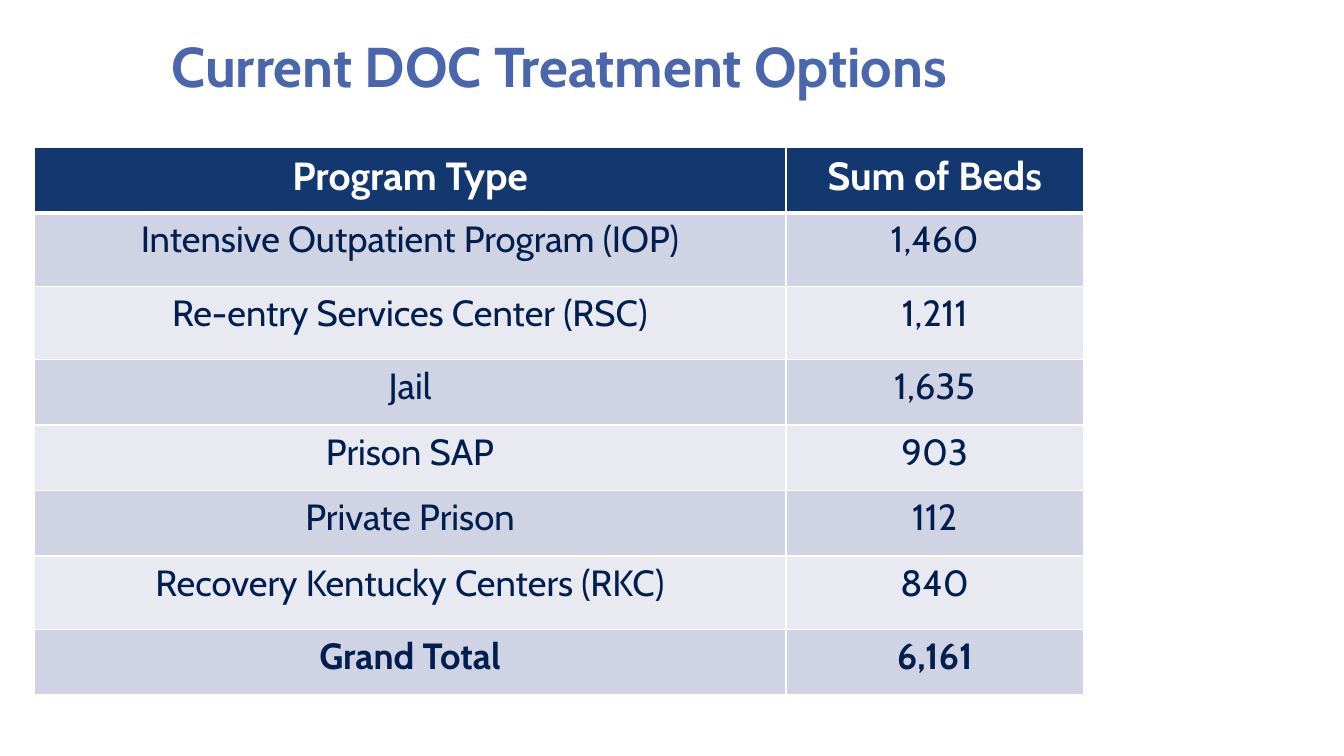
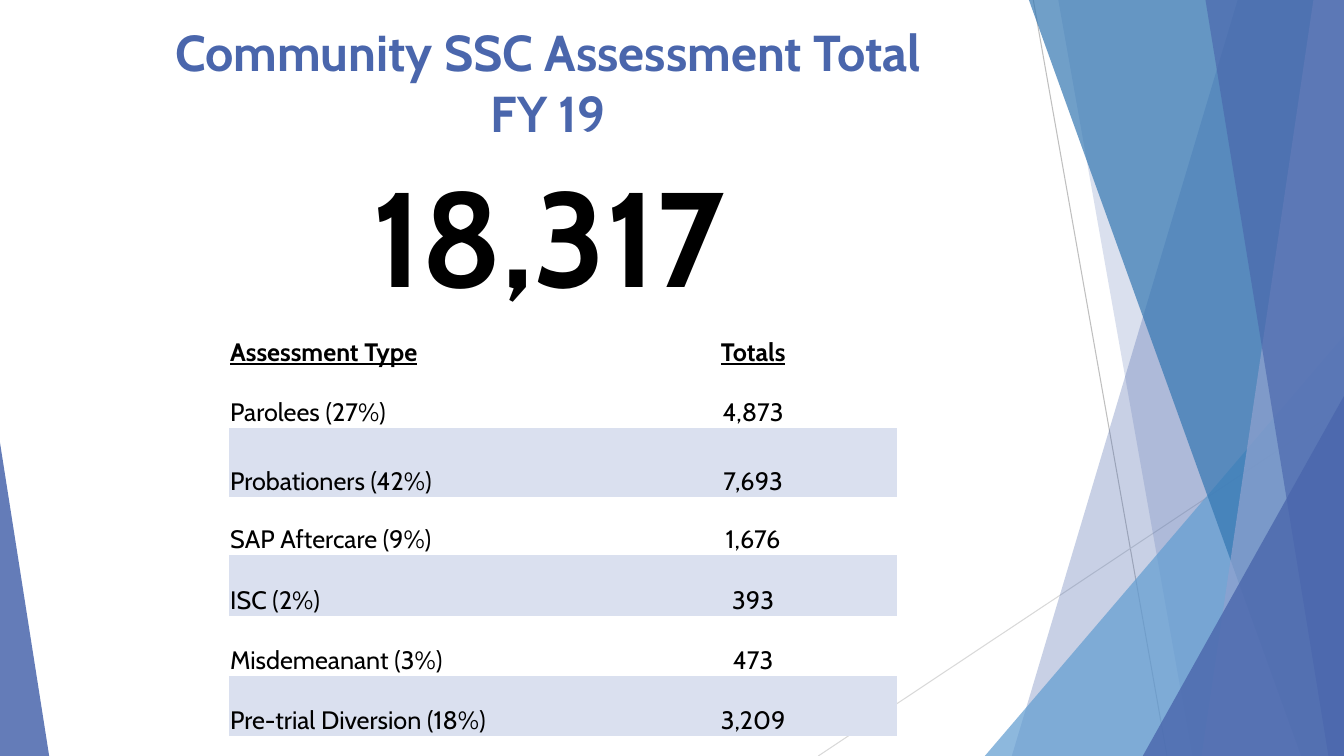
from dataclasses import dataclass
from itertools import product
from typing import Optional

from lxml.etree import SubElement as add_sub
from pptx import Presentation
from pptx.dml.color import RGBColor
from pptx.enum.shapes import MSO_CONNECTOR as Link, MSO_SHAPE as Form
from pptx.enum.text import MSO_ANCHOR as Anchor, MSO_AUTO_SIZE as Fit, PP_ALIGN as Align
from pptx.oxml import parse_xml
from pptx.oxml.ns import nsdecls, qn
from pptx.shapes.base import BaseShape
from pptx.slide import Slide
from pptx.util import Cm, Pt

FONT = "Cabin"
WIDTH, HEIGHT = 33.87, 19.05
PLAIN_GRID = "{2D5ABB26-0587-4C30-8999-92F81FD0307C}"

WHITE = RGBColor(0xFF, 0xFF, 0xFF)
BLACK = RGBColor(0x00, 0x00, 0x00)
BLUE = RGBColor(0x4A, 0x66, 0xAC)
SKY = RGBColor(0x62, 0x9D, 0xD1)
OCEAN = RGBColor(0x34, 0x77, 0xB2)
MIST = RGBColor(0x90, 0xA2, 0xCF)
NAVY = RGBColor(0x13, 0x38, 0x6F)
INK = RGBColor(0x00, 0x1F, 0x4F)
DARK_BAND = RGBColor(0xD0, 0xD3, 0xE3)
LIGHT_BAND = RGBColor(0xE9, 0xEA, 0xF1)
PALE_BAND = RGBColor(0xDA, 0xE0, 0xEF)
GREY = RGBColor(0xBF, 0xBF, 0xBF)
SILVER = RGBColor(0xD9, 0xD9, 0xD9)


@dataclass(frozen=True)
class Box:
    left: float
    top: float
    width: float
    height: float

    def lengths(self) -> tuple[Cm, Cm, Cm, Cm]:
        return Cm(self.left), Cm(self.top), Cm(self.width), Cm(self.height)


@dataclass(frozen=True)
class Style:
    size: float
    color: RGBColor
    bold: bool = False
    under: bool = False


@dataclass(frozen=True)
class Shard:
    top: float
    bottom: float
    color: RGBColor
    alpha: int


@dataclass(frozen=True)
class Peak:
    box: Box
    tip: float
    color: RGBColor
    alpha: int


@dataclass(frozen=True)
class Ray:
    start: tuple[float, float]
    end: tuple[float, float]
    color: RGBColor


@dataclass(frozen=True)
class Grid:
    left: float
    top: float
    widths: tuple[float, ...]
    heights: tuple[float, ...]
    rows: tuple[tuple[str, str], ...]
    head: Style
    body: Style
    last: Style
    fills: tuple[Optional[RGBColor], ...]
    sides: tuple[Align, Align]
    anchor: Anchor = Anchor.TOP
    inset: Optional[float] = None
    ruled: bool = False


RAYS = (
    Ray((26.04, 0), (29.41, HEIGHT), GREY),
    Ray((WIDTH, 10.24), (20.62, HEIGHT), SILVER),
)
FACETS = (
    Shard(31.19, 25.5, BLUE, 30),
    Shard(26.67, 30.05, BLUE, 20),
    Peak(Box(24.82, 8.46, 9.05, 10.59), 1, SKY, 72),
    Shard(25.93, 32.79, OCEAN, 70),
    Shard(33.1, 30.28, MIST, 70),
    Shard(30.38, 33.48, BLUE, 65),
    Peak(Box(28.8, 9.98, 5.07, 9.07), 1, BLUE, 80),
    Peak(Box(0, 11.15, 1.24, 7.9), 0, BLUE, 85),
)

BED_TEXT = Style(26, INK)
BEDS = Grid(
    0.86, 3.71, (18.95, 7.49),
    (1.65, 1.85, 1.85, 1.65, 1.65, 1.65, 1.85, 1.65),
    (
        ("Program Type", "Sum of Beds"),
        ("Intensive Outpatient Program (IOP)", "1,460"),
        ("Re-entry Services Center (RSC)", "1,211"),
        ("Jail", "1,635"),
        ("Prison SAP", "903"),
        ("Private Prison", "112"),
        ("Recovery Kentucky Centers (RKC)", "840"),
        ("Grand Total", "6,161"),
    ),
    Style(28, WHITE, bold=True), BED_TEXT, Style(26, INK, bold=True),
    (NAVY,) + (DARK_BAND, LIGHT_BAND) * 3 + (DARK_BAND,),
    (Align.CENTER, Align.CENTER), ruled=True,
)

COUNT_TEXT = Style(18, BLACK)
COUNTS = Grid(
    5.77, 7.75, (9.58, 7.26),
    (1.52, 1.52, 1.73, 1.47, 1.52, 1.52, 1.52),
    (
        ("Assessment Type", "Totals"),
        ("Parolees (27%)", "4,873"),
        ("Probationers (42%)", "7,693"),
        ("SAP Aftercare (9%)", "1,676"),
        ("ISC (2%)", "393"),
        ("Misdemeanant (3%)", "473"),
        ("Pre-trial Diversion (18%)", "3,209"),
    ),
    Style(18, BLACK, bold=True, under=True), COUNT_TEXT, COUNT_TEXT,
    (None,) + (None, PALE_BAND) * 3,
    (Align.LEFT, Align.CENTER), Anchor.BOTTOM, inset=0.03,
)


def write(para, text: str, style: Style, side: Align) -> None:
    para.alignment = side
    for i, part in enumerate(text.split("\n")):
        if i:
            para.add_line_break()
        run = para.add_run()
        run.text = part
        font = run.font
        font.name, font.size = FONT, Pt(style.size)
        font.bold, font.underline = style.bold, style.under
        font.color.rgb = style.color


def fill_holder(shape: BaseShape, box: Box, text: str, style: Style) -> None:
    shape.left, shape.top, shape.width, shape.height = box.lengths()
    frame = shape.text_frame
    frame.word_wrap = True
    frame.auto_size = Fit.NONE
    frame.vertical_anchor = Anchor.TOP
    write(frame.paragraphs[0], text, style, Align.CENTER)


def set_title(slide: Slide, box: Box, text: str, size: float) -> None:
    fill_holder(slide.shapes.title, box, text, Style(size, BLUE, bold=True))


def draw_ray(slide: Slide, ray: Ray) -> None:
    ends = (Cm(n) for n in ray.start + ray.end)
    line = slide.shapes.add_connector(Link.STRAIGHT, *ends)
    line.line.color.rgb = ray.color
    line.line.width = Pt(0.75)
    add_sub(line.element.spPr, qn("a:effectLst"))


def draw_facet(slide: Slide, facet: Shard | Peak) -> None:
    if isinstance(facet, Peak):
        shape = slide.shapes.add_shape(Form.ISOSCELES_TRIANGLE, *facet.box.lengths())
        shape.adjustments[0] = facet.tip
    else:
        pen = slide.shapes.build_freeform(Cm(facet.top), 0)
        spots = ((WIDTH, 0), (WIDTH, HEIGHT), (facet.bottom, HEIGHT))
        pen.add_line_segments([(Cm(x), Cm(y)) for x, y in spots], close=True)
        shape = pen.convert_to_shape()
    shape.shadow.inherit = False
    shape.line.fill.background()
    shape.fill.solid()
    shape.fill.fore_color.rgb = facet.color
    tint = next(shape.element.spPr.iter(qn("a:srgbClr")))
    add_sub(tint, qn("a:alpha"), val=str(facet.alpha * 1000))


def rule_cell(cell, row: int) -> None:
    props = cell._tc.get_or_add_tcPr()
    for i, side in enumerate("LRTB"):
        points = 3 if (row, side) in ((0, "B"), (1, "T")) else 1
        props.insert(i, parse_xml(
            f'<a:ln{side} {nsdecls("a")} w="{Pt(points)}"><a:solidFill>'
            f'<a:srgbClr val="{WHITE}"/></a:solidFill></a:ln{side}>'
        ))


def draw_grid(slide: Slide, grid: Grid) -> None:
    box = Box(grid.left, grid.top, sum(grid.widths), sum(grid.heights))
    count = len(grid.rows)
    frame = slide.shapes.add_table(count, len(grid.widths), *box.lengths())
    next(frame.element.iter(qn("a:tableStyleId"))).text = PLAIN_GRID
    table = frame.table
    for col, width in zip(table.columns, grid.widths):
        col.width = Cm(width)
    for row, height in zip(table.rows, grid.heights):
        row.height = Cm(height)
    styles = [grid.head] + [grid.body] * (count - 2) + [grid.last]
    for r, c in product(range(count), range(len(grid.widths))):
        cell = table.cell(r, c)
        cell.vertical_anchor = grid.anchor
        if grid.inset is not None:
            cell.margin_left = cell.margin_right = cell.margin_top = Cm(grid.inset)
            cell.margin_bottom = 0
        color = grid.fills[r]
        if color is None:
            cell.fill.background()
        else:
            cell.fill.solid()
            cell.fill.fore_color.rgb = color
        if grid.ruled:
            rule_cell(cell, r)
        write(cell.text_frame.paragraphs[0], grid.rows[r][c], styles[r], grid.sides[c])


def build_beds(slide: Slide) -> None:
    set_title(slide, Box(1.32, 0.66, 25.55, 3.78), "Current DOC Treatment Options", 40)
    draw_grid(slide, BEDS)


def build_counts(slide: Slide) -> None:
    for ray in RAYS:
        draw_ray(slide, ray)
    for facet in FACETS:
        draw_facet(slide, facet)
    set_title(slide, Box(1.88, 0.41, 23.88, 3.66),
              "Community SSC Assessment Total\nFY 19", 36)
    body = slide.placeholders[1]
    fill_holder(body, Box(1.88, 3.73, 23.88, 10.77), "18,317",
                Style(96, BLACK, bold=True))
    para = body.text_frame.paragraphs[0]
    para.space_before = Pt(10)
    props = para._p.get_or_add_pPr()
    props.set("marL", "0")
    props.set("indent", "0")
    add_sub(props, qn("a:buNone"))
    draw_grid(slide, COUNTS)


def main() -> None:
    deck = Presentation()
    deck.slide_width, deck.slide_height = Cm(WIDTH), Cm(HEIGHT)
    layouts = deck.slide_layouts
    build_beds(deck.slides.add_slide(layouts.get_by_name("Title Only")))
    build_counts(deck.slides.add_slide(layouts.get_by_name("Title and Content")))
    deck.save("out.pptx")


if __name__ == "__main__":
    main()
